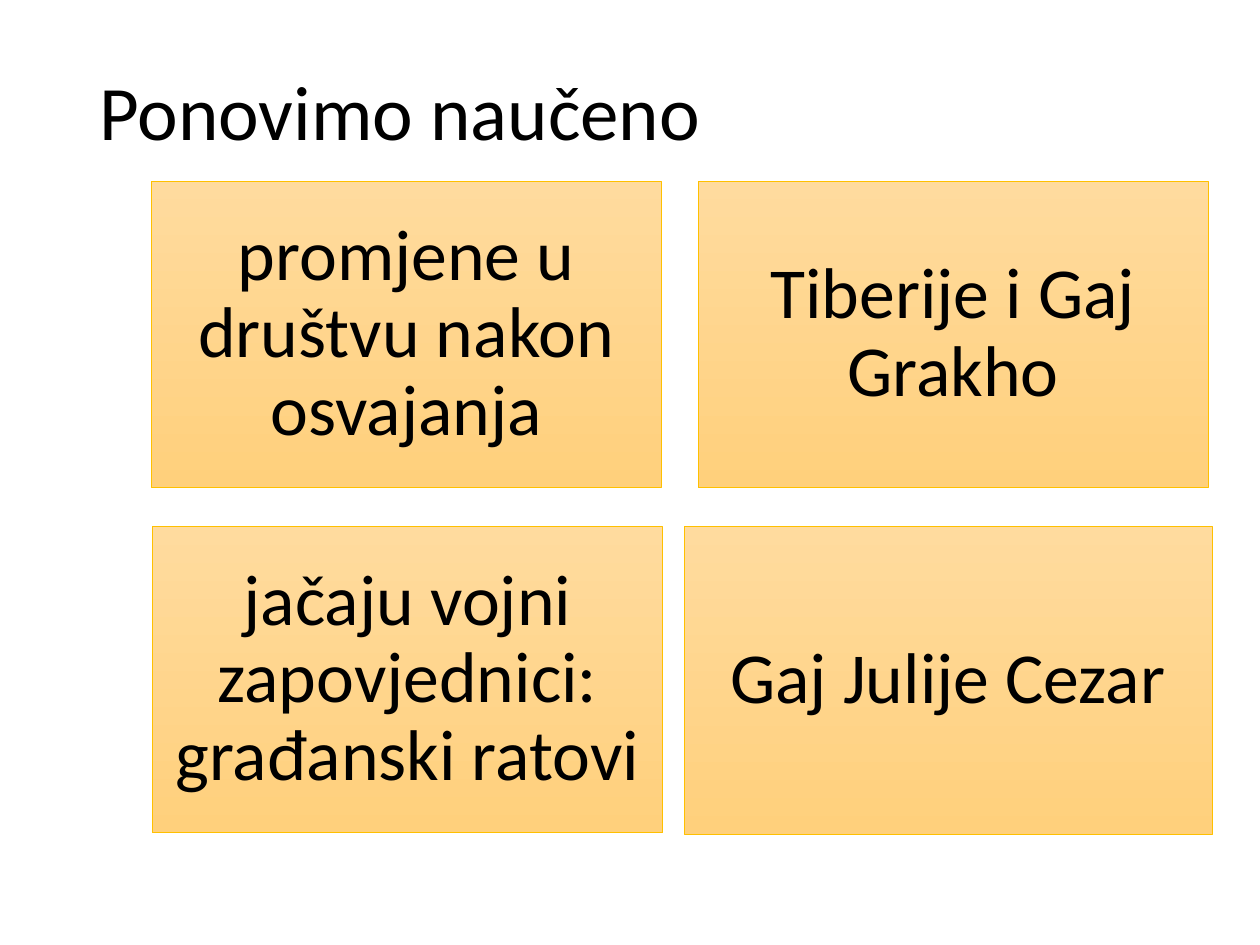
import pptx
import pptx.dml.color
import pptx.enum.shapes
import pptx.enum.text
import pptx.util

Pt = pptx.util.Pt
RGBColor = pptx.dml.color.RGBColor
ALIGN = pptx.enum.text.PP_ALIGN
MIDDLE = pptx.enum.text.MSO_ANCHOR.MIDDLE

BLACK = RGBColor(0x00, 0x00, 0x00)
GOLD = RGBColor(0xFF, 0xC0, 0x00)
LIGHT_ORANGE = RGBColor(0xFF, 0xDB, 0x9E)
DARK_ORANGE = RGBColor(0xFF, 0xD0, 0x7C)

CARD_INSET = 12.24
CARDS = [
    # text, left, top, width, height
    ("promjene u društvu nakon osvajanja", 86.4, 103.68, 291.6, 174.96),
    ("Tiberije i Gaj Grakho", 398.88, 103.68, 291.6, 174.96),
    ("jačaju vojni zapovjednici: građanski ratovi", 87.12, 300.96, 291.6, 174.96),
    ("Gaj Julije Cezar", 390.96, 300.96, 301.68, 175.68),
]


def write_text(text_frame, text, size, alignment):
    text_frame.word_wrap = True
    text_frame.auto_size = pptx.enum.text.MSO_AUTO_SIZE.NONE
    text_frame.vertical_anchor = MIDDLE
    paragraph = text_frame.paragraphs[0]
    paragraph.alignment = alignment
    paragraph.line_spacing = 0.9
    paragraph.space_before = Pt(0)
    run = paragraph.add_run()
    run.text = text
    run.font.name = "Calibri"
    run.font.size = Pt(size)
    run.font.color.rgb = BLACK


presentation = pptx.Presentation()
presentation.slide_width = Pt(720)
presentation.slide_height = Pt(540)
slide = presentation.slides.add_slide(presentation.slide_layouts[5])

title = slide.shapes.title
title.left, title.top, title.width, title.height = Pt(49.5), Pt(28.75), Pt(621), Pt(75)
write_text(title.text_frame, "Ponovimo naučeno", 44, ALIGN.LEFT)

for text, left, top, width, height in CARDS:
    card = slide.shapes.add_shape(
        pptx.enum.shapes.MSO_SHAPE.RECTANGLE, Pt(left), Pt(top), Pt(width), Pt(height)
    )
    card.shadow.inherit = False
    card.fill.gradient()
    card.fill.gradient_angle = 270
    for stop, color in zip(card.fill.gradient_stops, (LIGHT_ORANGE, DARK_ORANGE)):
        stop.color.rgb = color
    card.line.color.rgb = GOLD
    card.line.width = Pt(0.5)
    text_frame = card.text_frame
    text_frame.margin_left = text_frame.margin_right = Pt(CARD_INSET)
    text_frame.margin_top = text_frame.margin_bottom = Pt(CARD_INSET)
    write_text(text_frame, text, 41, ALIGN.CENTER)

presentation.save("out.pptx")
